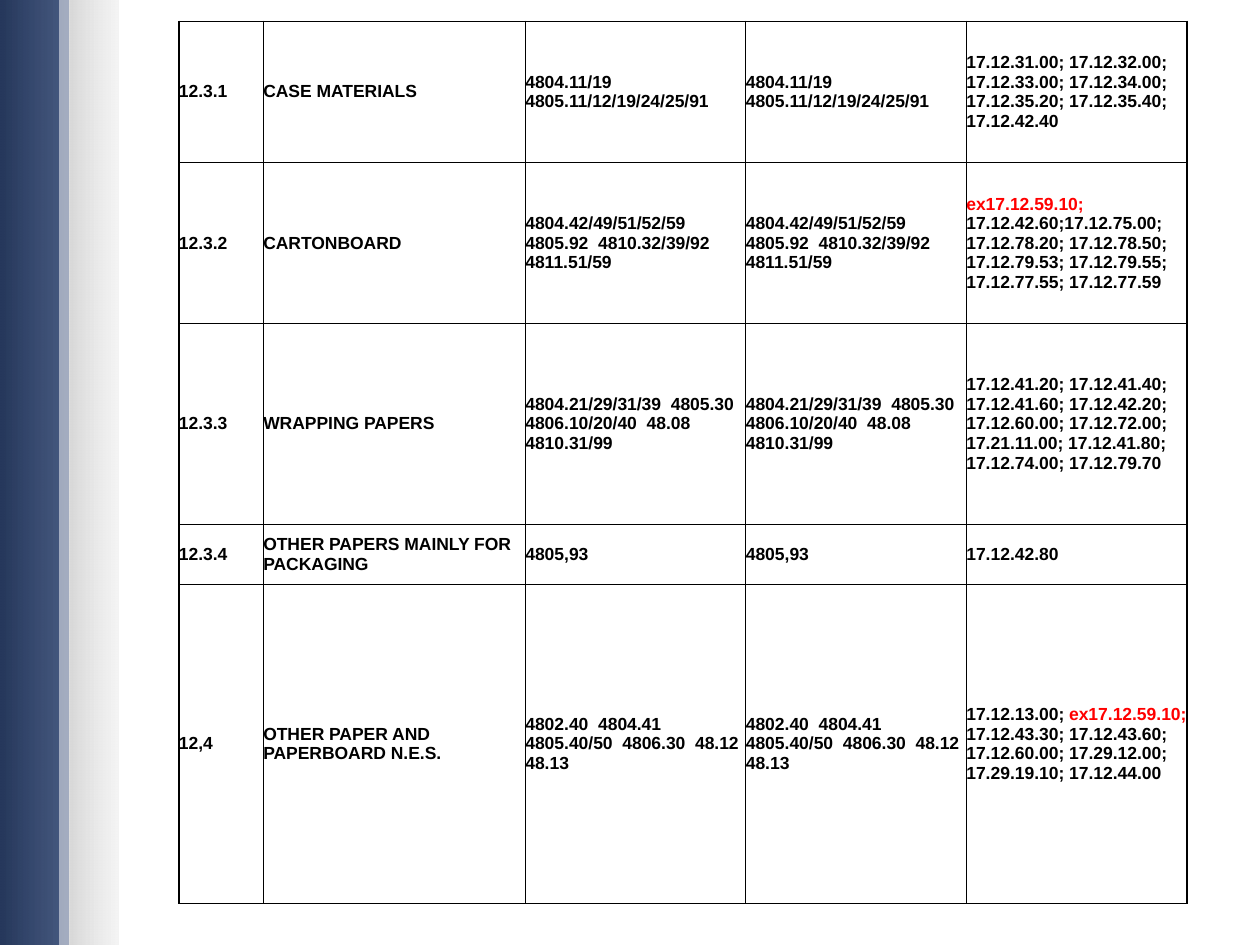
from lxml import etree
from pptx import Presentation
from pptx import util as u
from pptx.dml.color import RGBColor
from pptx.enum import shapes, text
from pptx.oxml.ns import qn

SLIDE_W, SLIDE_H = 10, 7.5
COLORS = {
    "navy": "26385C", "blue": "344974", "silver": "D9D9D9",
    "pale": "F2F2F2", "white": "FFFFFF", "ink": "000000", "changed": "FF0000",
}
FONT = {"name": "Arial", "size": u.Pt(10), "bold": True}
CELL = {
    "margin_left": 0, "margin_right": 0, "margin_top": 0, "margin_bottom": 0,
    "vertical_anchor": text.MSO_ANCHOR.MIDDLE,
}
TABLE_FLAGS = {"first_row": False, "horz_banding": False}

TABLE_LEFT, TABLE_TOP = 1.42, 0.17
COLUMN_WIDTHS = [0.67, 2.08, 1.75, 1.75, 1.75]
ROW_HEIGHTS = [1.12, 1.28, 1.59, 0.48, 2.53]
OUTER_LINE, INNER_LINE = 1, 0.5
CHANGED_CODE = "ex17.12.59.10;"

# Item number, product, trade codes (shown in two columns), production codes
PRODUCTS = [
    ("12.3.1", "CASE MATERIALS", "4804.11/19  4805.11/12/19/24/25/91",
     "17.12.31.00; 17.12.32.00; 17.12.33.00; 17.12.34.00; 17.12.35.20; "
     "17.12.35.40; 17.12.42.40"),
    ("12.3.2", "CARTONBOARD",
     "4804.42/49/51/52/59  4805.92  4810.32/39/92  4811.51/59",
     "ex17.12.59.10; 17.12.42.60;17.12.75.00; 17.12.78.20; 17.12.78.50; "
     "17.12.79.53; 17.12.79.55; 17.12.77.55; 17.12.77.59"),
    ("12.3.3", "WRAPPING PAPERS",
     "4804.21/29/31/39  4805.30  4806.10/20/40  48.08  4810.31/99",
     "17.12.41.20; 17.12.41.40; 17.12.41.60; 17.12.42.20; 17.12.60.00; "
     "17.12.72.00; 17.21.11.00; 17.12.41.80; 17.12.74.00; 17.12.79.70"),
    ("12.3.4", "OTHER PAPERS MAINLY FOR PACKAGING", "4805,93", "17.12.42.80"),
    ("12,4", "OTHER PAPER AND PAPERBOARD N.E.S.",
     "4802.40  4804.41  4805.40/50  4806.30  48.12  48.13",
     "17.12.13.00; ex17.12.59.10; 17.12.43.30; 17.12.43.60; 17.12.60.00; "
     "17.29.12.00; 17.29.19.10; 17.12.44.00"),
]


def apply(target, values):
    for key, value in values.items():
        setattr(target, key, value)


def rgb(name):
    return RGBColor.from_string(COLORS[name])


def set_alpha(color_element, percent):
    etree.SubElement(color_element, qn("a:alpha"), val=str(percent * 1000))


def add_band(slide, left, width):
    """Full-height band; left and width are shares of the slide's width."""
    band = slide.shapes.add_shape(
        shapes.MSO_SHAPE.RECTANGLE, u.Inches(left * SLIDE_W), 0,
        u.Inches(width * SLIDE_W), u.Inches(SLIDE_H))
    band.shadow.inherit = False
    band.line.fill.background()
    return band


def add_gradient_band(slide, left, width, right_color, left_color, opacity):
    band = add_band(slide, left, width)
    band.fill.gradient()
    band.fill.gradient_angle = 180
    for stop, name in zip(band.fill.gradient_stops, (right_color, left_color)):
        stop.color.rgb = rgb(name)
    set_alpha(next(band.element.iter(qn("a:srgbClr"))), opacity)


def add_highlight(slide, left, width, opacity):
    band = add_band(slide, left, width)
    band.fill.solid()
    band.fill.fore_color.rgb = rgb("white")
    set_alpha(next(band.element.iter(qn("a:srgbClr"))), opacity)


def set_borders(cell, widths):
    """Widths in points, in the order left, right, top, bottom."""
    properties = cell._tc.get_or_add_tcPr()
    for position, (side, width) in enumerate(zip("LRTB", widths)):
        line = etree.Element(qn(f"a:ln{side}"), w=str(int(u.Pt(width))))
        fill = etree.SubElement(line, qn("a:solidFill"))
        etree.SubElement(fill, qn("a:srgbClr"), val=COLORS["ink"])
        properties.insert(position, line)


def write_codes(cell, content):
    """Write the cell's text, with the changed code in its own colour."""
    paragraph = cell.text_frame.paragraphs[0]
    for part in content.partition(CHANGED_CODE):
        if part:
            run = paragraph.add_run()
            run.text = part
            apply(run.font, FONT)
            run.font.color.rgb = rgb("changed" if part == CHANGED_CODE else "ink")


def add_product_table(slide):
    last_row, last_column = len(ROW_HEIGHTS) - 1, len(COLUMN_WIDTHS) - 1
    table = slide.shapes.add_table(
        len(ROW_HEIGHTS), len(COLUMN_WIDTHS),
        u.Inches(TABLE_LEFT), u.Inches(TABLE_TOP),
        u.Inches(sum(COLUMN_WIDTHS)), u.Inches(sum(ROW_HEIGHTS))).table
    apply(table, TABLE_FLAGS)
    for column, width in zip(table.columns, COLUMN_WIDTHS):
        column.width = u.Inches(width)
    for row, height in zip(table.rows, ROW_HEIGHTS):
        row.height = u.Inches(height)

    for r, (number, product, trade, production) in enumerate(PRODUCTS):
        for c, content in enumerate((number, product, trade, trade, production)):
            cell = table.cell(r, c)
            apply(cell, CELL)
            cell.fill.background()
            on_edge = (c == 0, c == last_column, r == 0, r == last_row)
            set_borders(cell, [OUTER_LINE if e else INNER_LINE for e in on_edge])
            write_codes(cell, content)


def main():
    deck = Presentation()
    apply(deck, {"slide_width": u.Inches(SLIDE_W),
                 "slide_height": u.Inches(SLIDE_H)})
    slide = deck.slides.add_slide(deck.slide_layouts[6])

    # Side bands
    add_gradient_band(slide, 0, 0.055, "blue", "navy", 90)
    add_gradient_band(slide, 0.055, 0.039, "pale", "silver", 80)
    add_highlight(slide, 0.047, 0.008, 50)

    # Product classification
    add_product_table(slide)
    deck.save("out.pptx")


if __name__ == "__main__":
    main()
